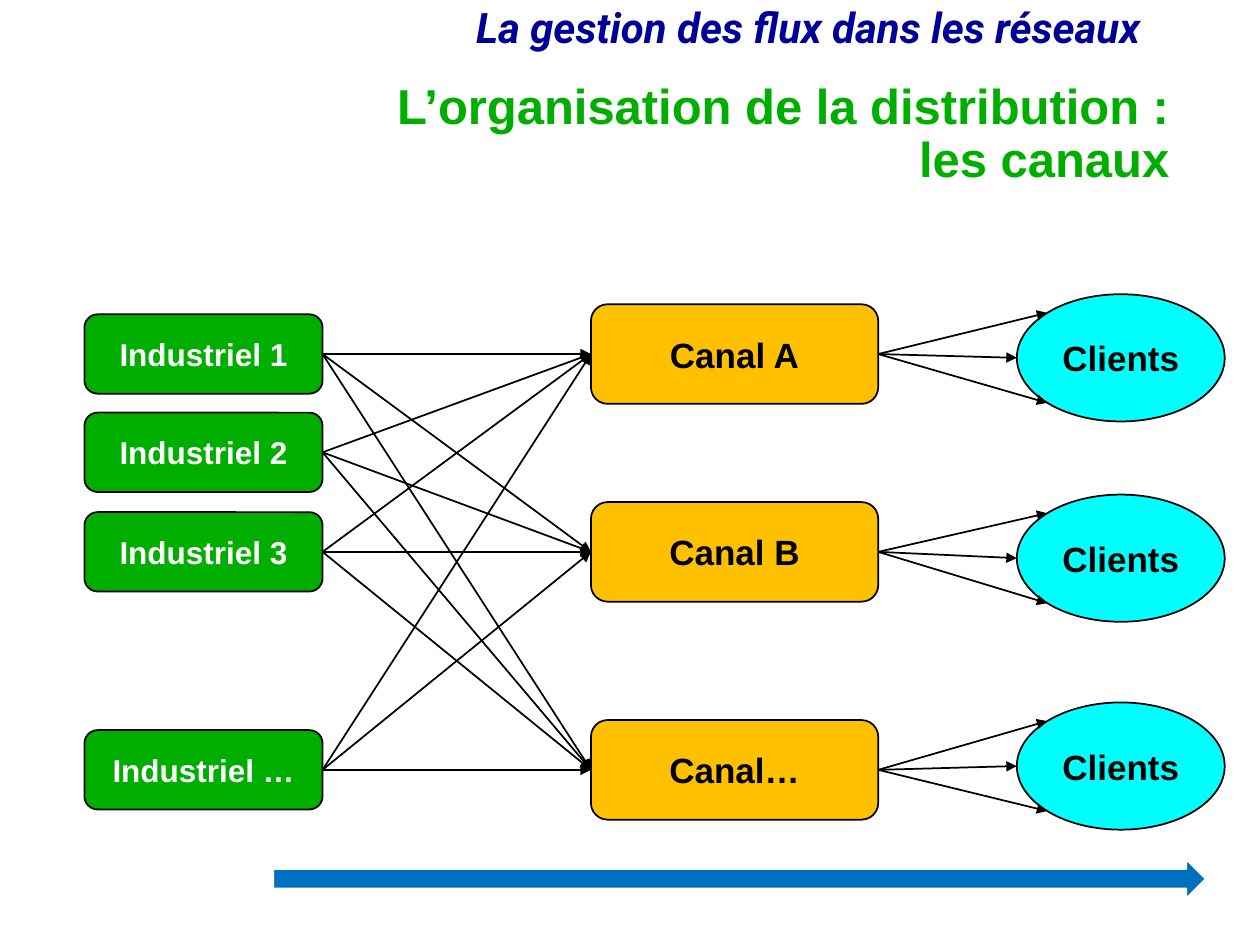
from dataclasses import dataclass
from math import sqrt

from lxml import etree
from pptx import Presentation
from pptx.dml.color import RGBColor
from pptx.enum.shapes import MSO_CONNECTOR, MSO_SHAPE
from pptx.enum.text import MSO_ANCHOR, MSO_AUTO_SIZE, PP_ALIGN
from pptx.oxml.ns import qn
from pptx.util import Inches, Pt

ROUNDED = MSO_SHAPE.ROUNDED_RECTANGLE
OVAL = MSO_SHAPE.OVAL
RIGHT_ARROW = MSO_SHAPE.RIGHT_ARROW
STRAIGHT = MSO_CONNECTOR.STRAIGHT
MIDDLE = MSO_ANCHOR.MIDDLE
LEFT, CENTER, RIGHT = PP_ALIGN.LEFT, PP_ALIGN.CENTER, PP_ALIGN.RIGHT

COLORS = {
    "green": "00AE00",
    "orange": "FFC000",
    "cyan": "00FFFF",
    "blue": "0070C0",
    "navy": "000099",
    "black": "000000",
    "white": "FFFFFF",
}


@dataclass
class Column:
    """Identical nodes stacked at the given vertical centres."""
    kind: MSO_SHAPE
    left: float
    width: float
    height: float
    labels: list[str]
    centers: list[float]
    fill: str
    color: str
    size: int

    @property
    def right(self) -> float:
        return self.left + self.width


INDUSTRIALS = Column(ROUNDED, 0.67, 1.89, 0.63,
                     ["Industriel 1", "Industriel 2", "Industriel 3", "Industriel …"],
                     [2.81, 3.59, 4.38, 6.11], "green", "white", 18)
CHANNELS = Column(ROUNDED, 4.69, 2.28, 0.79, ["Canal A", "Canal B", "Canal…"],
                  [2.81, 4.38, 6.11], "orange", "black", 20)
CLIENTS = Column(OVAL, 8.07, 1.65, 1.01, ["Clients"] * 3,
                 [2.84, 4.43, 6.08], "cyan", "black", 20)


def rgb(name: str) -> RGBColor:
    return RGBColor.from_string(COLORS[name])


def write(tf, text: str, *, size: int, color: str, font: str = "Arial",
          italic: bool = False, align=CENTER, spacing: float = 1.0) -> None:
    tf.word_wrap = True
    p = tf.paragraphs[0]
    p.alignment = align
    p.line_spacing = spacing
    for i, line in enumerate(text.split("\n")):
        if i:
            p.add_line_break()
        r = p.add_run()
        r.text = line
        r.font.name = font
        r.font.size = Pt(size)
        r.font.bold = True
        r.font.italic = italic
        r.font.color.rgb = rgb(color)


def add_shape(s, kind: MSO_SHAPE, left: float, top: float, width: float,
              height: float, fill: str, line: str):
    sp = s.shapes.add_shape(kind, Inches(left), Inches(top), Inches(width), Inches(height))
    sp.shadow.inherit = False
    sp.fill.solid()
    sp.fill.fore_color.rgb = rgb(fill)
    sp.line.color.rgb = rgb(line)
    sp.line.width = Pt(1)
    return sp


def add_column(s, col: Column) -> None:
    for label, center in zip(col.labels, col.centers):
        sp = add_shape(s, col.kind, col.left, center - col.height / 2,
                       col.width, col.height, col.fill, "black")
        sp.text_frame.vertical_anchor = MIDDLE
        write(sp.text_frame, label, size=col.size, color=col.color)


def add_arrow(s, x1: float, y1: float, x2: float, y2: float) -> None:
    cx = s.shapes.add_connector(STRAIGHT, Inches(x1), Inches(y1), Inches(x2), Inches(y2))
    cx.line.color.rgb = rgb("black")
    cx.line.width = Pt(1)
    etree.SubElement(cx.line._get_or_add_ln(), qn("a:tailEnd"), type="triangle")
    etree.SubElement(cx._element.spPr, qn("a:effectLst"))


def main() -> None:
    prs = Presentation()
    prs.slide_width, prs.slide_height = Inches(10), Inches(7.5)
    s = prs.slides.add_slide(prs.slide_layouts[5])

    # Course header
    header = s.shapes.add_textbox(Inches(3.68), Inches(0.01), Inches(6.34), Inches(0.46))
    write(header.text_frame, "La gestion des flux dans les réseaux", size=24,
          color="navy", font="Roboto", italic=True, align=LEFT, spacing=0.9)

    # Title
    title = s.shapes.title
    title.left, title.top = Inches(1.46), Inches(0.69)
    title.width, title.height = Inches(7.92), Inches(0.76)
    title.text_frame.auto_size = MSO_AUTO_SIZE.NONE
    title.text_frame.vertical_anchor = MIDDLE
    write(title.text_frame, "L’organisation de la distribution :\nles canaux",
          size=28, color="green", align=RIGHT, spacing=0.9)

    # Nodes
    for col in (INDUSTRIALS, CHANNELS, CLIENTS):
        add_column(s, col)

    # Every industrial supplies every channel
    for channel_y in CHANNELS.centers:
        for industrial_y in INDUSTRIALS.centers:
            add_arrow(s, INDUSTRIALS.right, industrial_y, CHANNELS.left, channel_y)

    # Each channel reaches the left, upper-left and lower-left of its clients
    diagonal = (1 - 1 / sqrt(2)) * CLIENTS.width / 2
    rise = CLIENTS.height / 2 / sqrt(2)
    for channel_y, client_y in zip(CHANNELS.centers, CLIENTS.centers):
        for dx, dy in ((0, 0), (diagonal, -rise), (diagonal, rise)):
            add_arrow(s, CHANNELS.right, channel_y, CLIENTS.left + dx, client_y + dy)

    # Overall flow direction
    add_shape(s, RIGHT_ARROW, 2.17, 6.82, 7.4, 0.31, "blue", "white")

    prs.save("out.pptx")


if __name__ == "__main__":
    main()
